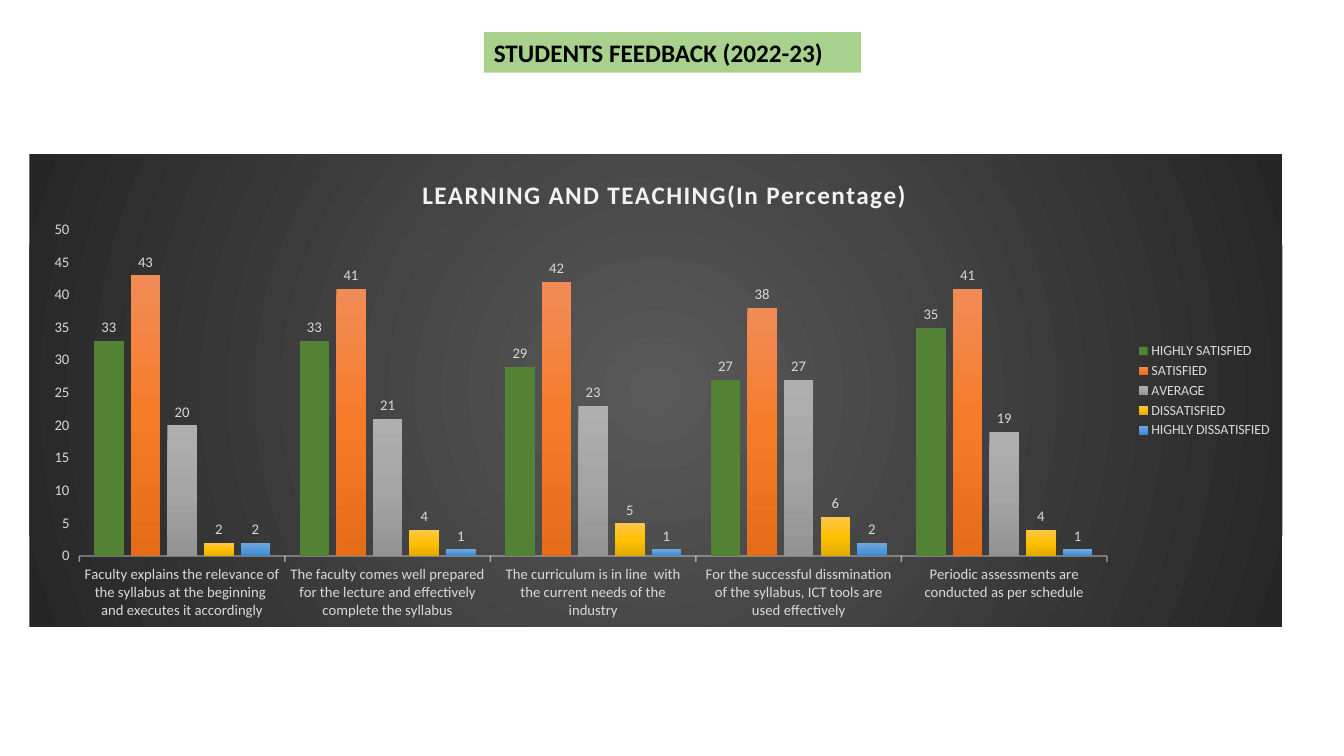
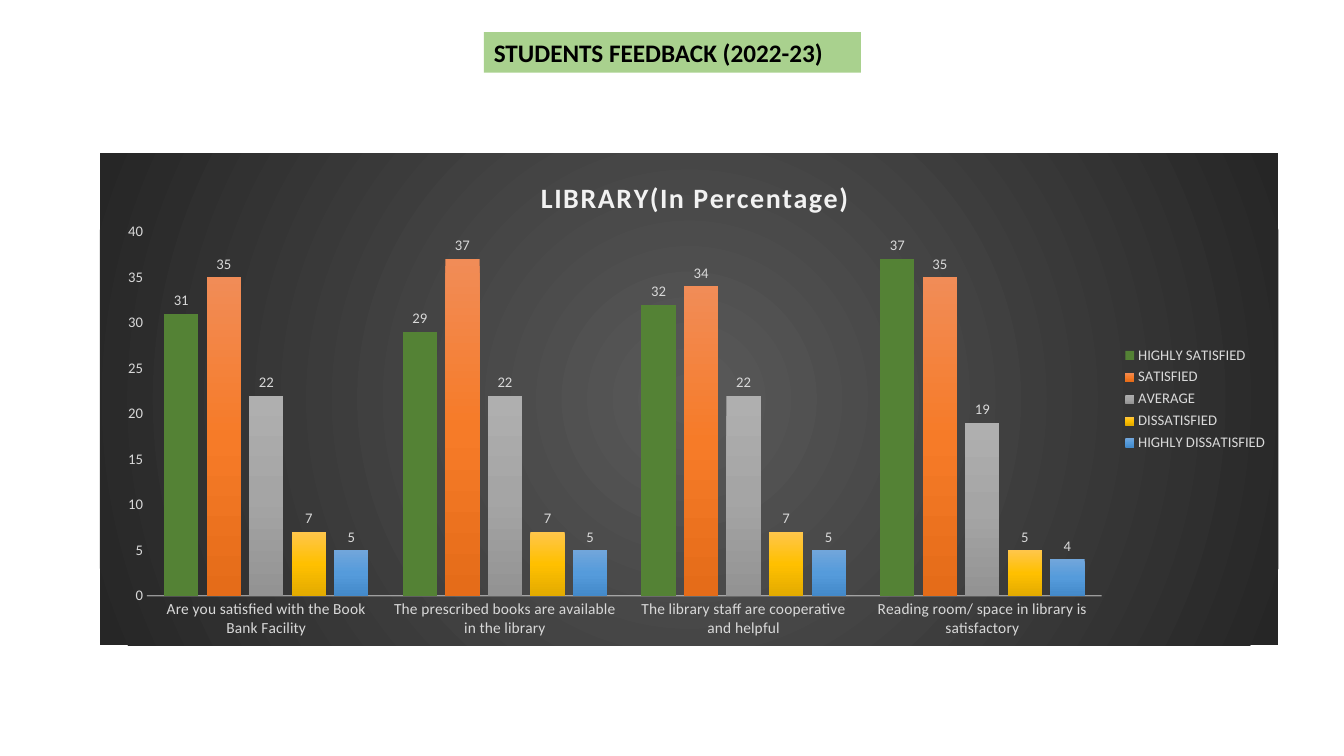
from dataclasses import dataclass

from pptx import Presentation
from pptx.chart.data import CategoryChartData
from pptx.dml.color import RGBColor
from pptx.enum.chart import XL_CHART_TYPE, XL_LABEL_POSITION, XL_LEGEND_POSITION, XL_TICK_MARK
from pptx.enum.text import MSO_AUTO_SIZE
from pptx.oxml import parse_xml
from pptx.oxml.ns import nsdecls
from pptx.util import Inches, Pt

COLUMN = XL_CHART_TYPE.COLUMN_CLUSTERED
ABOVE = XL_LABEL_POSITION.OUTSIDE_END
RIGHT = XL_LEGEND_POSITION.RIGHT
OUT, NONE = XL_TICK_MARK.OUTSIDE, XL_TICK_MARK.NONE
GROW = MSO_AUTO_SIZE.SHAPE_TO_FIT_TEXT


@dataclass(frozen=True)
class Theme:
    font: str = "Calibri"
    black: str = "000000"
    band: str = "A9D18E"
    light: str = "F2F2F2"
    pale: str = "D9D9D9"
    panel: tuple = ("595959", "262626")
    bars: tuple = (
        ("HIGHLY SATISFIED", ("548235",)),
        ("SATISFIED", ("F18C57", "F67B28", "E56C19")),
        ("AVERAGE", ("AFAFAF", "A5A5A5", "939393")),
        ("DISSATISFIED", ("FFC64B", "FFC000", "E3AB00")),
        ("HIGHLY DISSATISFIED", ("71A6DB", "559BDB", "448ACA")),
    )
    head: float = 18
    base: float = 10
    label: float = 10.5


THEME = Theme()
DOWN = '<a:lin ang="5400000" scaled="0"/>'
ROUND = ('<a:path path="circle"><a:fillToRect l="50000" t="50000" '
         'r="50000" b="50000"/></a:path>')

SLIDES = (
    {
        "title": "LEARNING AND TEACHING(In Percentage)",
        "box": (0.29, 1.53, 12.43, 4.69),
        "plot": {"x": 0.04, "y": 0.16, "w": 0.82, "h": 0.69},
        "spot": {"x": 0.31, "y": 0.04},
        "sizes": {"title": 18, "cats": 10.5, "legend": 10},
        "tick": OUT,
        "top": 50,
        "cats": (
            "Faculty explains the relevance of the syllabus at the beginning  and executes it accordingly",
            "The faculty comes well prepared for the lecture and effectively complete the syllabus",
            "The curriculum is in line  with the current needs of the industry",
            "For the successful dissmination of the syllabus, ICT tools are used effectively",
            "Periodic assessments are conducted as per schedule",
        ),
        "rows": (
            (33, 33, 29, 27, 35),
            (43, 41, 42, 38, 41),
            (20, 21, 23, 27, 19),
            (2, 4, 5, 6, 4),
            (2, 1, 1, 2, 1),
        ),
    },
    {
        "title": "LIBRARY(In Percentage)",
        "box": (0.99, 1.52, 11.69, 4.88),
        "plot": {"x": 0.04, "y": 0.16, "w": 0.81, "h": 0.74},
        "spot": {"x": 0.37, "y": 0.04},
        "sizes": {"title": 20, "cats": 11, "legend": 10.5},
        "tick": NONE,
        "top": 40,
        "cats": (
            "Are you satisfied with the Book Bank Facility",
            "The prescribed books are available in the library",
            "The library staff are cooperative and helpful",
            "Reading room/ space in library is satisfactory",
        ),
        "rows": (
            (31, 29, 32, 37),
            (35, 37, 34, 35),
            (22, 22, 22, 19),
            (7, 7, 7, 5),
            (5, 5, 5, 4),
        ),
    },
)


def put(item, **values):
    for name, value in values.items():
        setattr(item, name, value)


def style(font, size, color, bold=False):
    put(font, name=THEME.font, size=Pt(size), bold=bold)
    font.color.rgb = RGBColor.from_string(color)


def blend(colors, path):
    step = 100000 // (len(colors) - 1)
    stops = "".join(
        f'<a:gs pos="{i * step}"><a:srgbClr val="{color}"/></a:gs>'
        for i, color in enumerate(colors))
    return parse_xml(f'<a:gradFill {nsdecls("a")} rotWithShape="1">'
                     f'<a:gsLst>{stops}</a:gsLst>{path}</a:gradFill>')


def place(host, index, spot, target=""):
    for old in host.xpath("c:layout"):
        host.remove(old)
    modes = "".join(f'<c:{key}Mode val="edge"/>' for key in "xy")
    sides = "".join(f'<c:{key} val="{value}"/>' for key, value in spot.items())
    host.insert(index, parse_xml(
        f'<c:layout {nsdecls("c")}><c:manualLayout>{target}{modes}{sides}'
        '</c:manualLayout></c:layout>'))


def add_band(slide):
    band = slide.shapes.add_textbox(
        Inches(4.8), Inches(0.32), Inches(3.74), Inches(0.4))
    band.fill.solid()
    band.fill.fore_color.rgb = RGBColor.from_string(THEME.band)
    frame = band.text_frame
    put(frame, word_wrap=True, auto_size=GROW)
    run = frame.paragraphs[0].add_run()
    run.text = "STUDENTS FEEDBACK (2022-23)"
    style(run.font, THEME.head, THEME.black, True)


def add_title(chart, page):
    chart.has_title = True
    frame = chart.chart_title.text_frame
    run = frame.paragraphs[0].add_run()
    run.text = page["title"]
    style(run.font, page["sizes"]["title"], THEME.light, True)
    run.font._element.set("spc", "100")
    chart.chart_title.include_in_layout = False
    place(chart.element.xpath("c:chart/c:title")[0], 1, page["spot"])


def set_axes(chart, page):
    cats, values = chart.category_axis, chart.value_axis
    for axis, size in ((cats, page["sizes"]["cats"]), (values, THEME.label)):
        put(axis, has_major_gridlines=False, major_tick_mark=page["tick"],
            minor_tick_mark=NONE)
        style(axis.tick_labels.font, size, THEME.pale)
    put(values, minimum_scale=0, maximum_scale=page["top"], major_unit=5)
    values.format.line.fill.background()
    line = cats.format.line
    line.width = Pt(1)
    line.color.rgb = RGBColor.from_string(THEME.light)
    shade = cats._element.xpath("c:spPr//a:srgbClr")[0]
    shade.append(parse_xml(f'<a:alpha {nsdecls("a")} val="54000"/>'))


def set_bars(chart):
    plot = chart.plots[0]
    put(plot, gap_width=100, overlap=-24, vary_by_categories=False)
    for bar, (_, colors) in zip(plot.series, THEME.bars):
        if len(colors) == 1:
            bar.format.fill.solid()
            bar.format.fill.fore_color.rgb = RGBColor.from_string(colors[0])
        else:
            bar._element.get_or_add_spPr().insert(0, blend(colors, DOWN))
        put(bar.data_labels, show_value=True, position=ABOVE)
        style(bar.data_labels.font, THEME.label, THEME.pale)


def set_panel(chart):
    panel = parse_xml(f'<c:spPr {nsdecls("c", "a")}><a:ln><a:noFill/></a:ln></c:spPr>')
    panel.insert(0, blend(THEME.panel, ROUND))
    chart.element.xpath("c:chart")[0].addnext(panel)


def add_chart(slide, page):
    data = CategoryChartData()
    data.categories = page["cats"]
    for (name, _), row in zip(THEME.bars, page["rows"]):
        data.add_series(name, row)
    box = map(Inches, page["box"])
    chart = slide.shapes.add_chart(COLUMN, *box, data).chart
    style(chart.font, THEME.base, THEME.black)
    set_panel(chart)
    add_title(chart, page)
    set_axes(chart, page)
    set_bars(chart)
    chart.has_legend = True
    put(chart.legend, position=RIGHT, include_in_layout=False)
    style(chart.legend.font, page["sizes"]["legend"], THEME.pale)
    place(chart.element.xpath("c:chart/c:plotArea")[0], 0, page["plot"],
          '<c:layoutTarget val="inner"/>')


def main():
    deck = Presentation()
    put(deck, slide_width=Inches(13.33), slide_height=Inches(7.5))
    for page in SLIDES:
        slide = deck.slides.add_slide(deck.slide_layouts[6])
        add_band(slide)
        add_chart(slide, page)
    deck.save("out.pptx")


if __name__ == "__main__":
    main()
